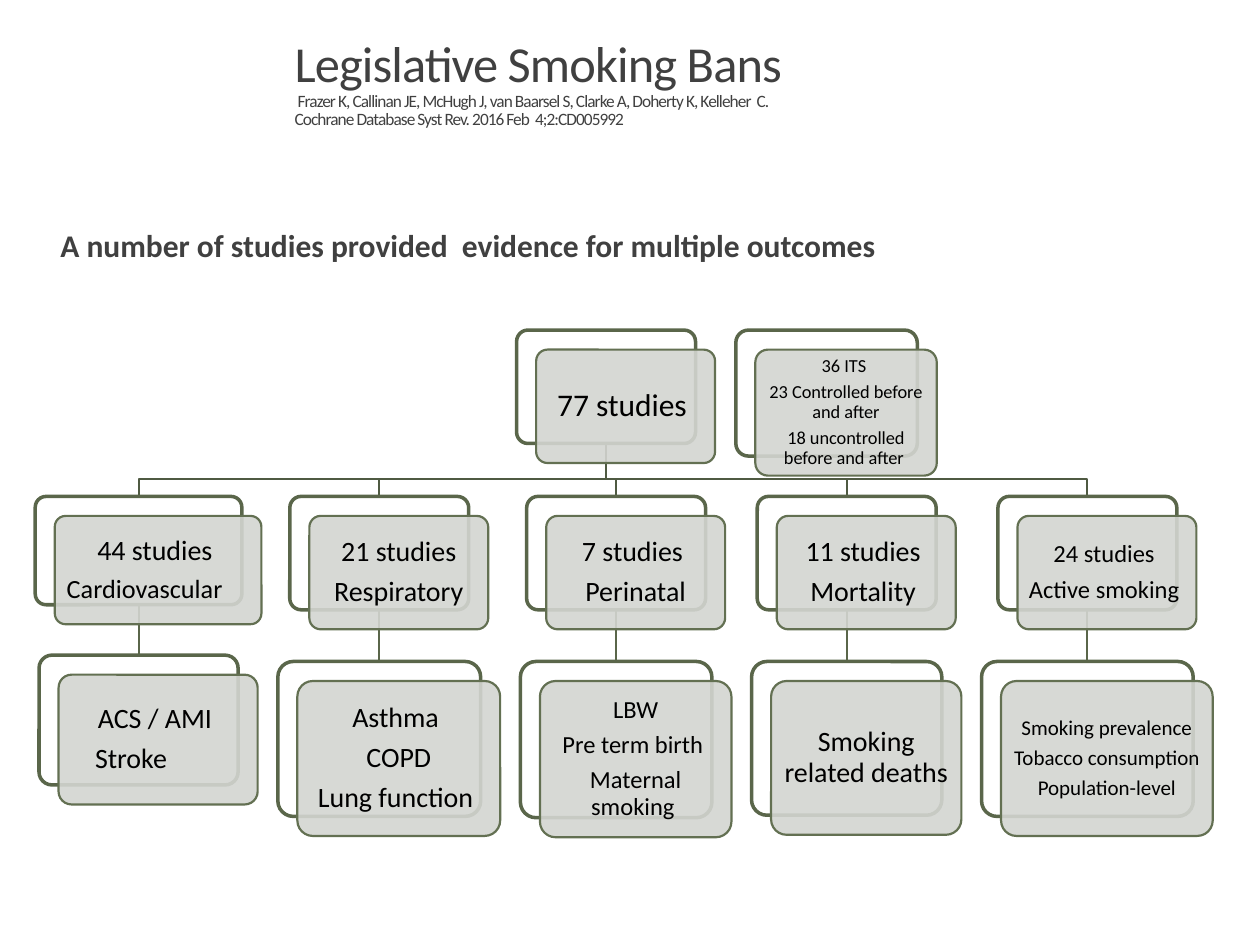
from lxml.etree import SubElement
from pptx import Presentation
from pptx.dml.color import RGBColor
from pptx.enum.shapes import MSO_CONNECTOR as Connector, MSO_SHAPE as Shape
from pptx.enum.text import MSO_ANCHOR as Anchor, PP_ALIGN as Align
from pptx.oxml.ns import qn
from pptx.util import Inches, Pt

CARD_SHIFT = 0.155
ROOT_X, ROOT_TOP, ROOT_BOTTOM = 4.81, 2.62, 3.52
BRANCH_Y, STUDY_TOP = 3.8, 3.94
STUDY_WIDTH, STUDY_HEIGHT = 1.42, 0.9
FRAME_COLOR, PANEL_COLOR, BRANCH_COLOR = "5A664A", "637052", "4F5A42"

COLUMNS = [
    dict(center=1.1, width=1.64, height=0.86, size=16,
         studies=["44 studies ", ("Cardiovascular \t", 15)],
         outcome_top=5.2, outcome_width=1.58, outcome_height=1.03, outcome_size=16,
         outcomes=["ACS / AMI ", "Stroke \t"]),
    dict(center=3.01, size=16, studies=["21 studies", "Respiratory"],
         outcome_width=1.61, outcome_height=1.23, outcome_size=16,
         outcomes=["Asthma ", "COPD", "Lung function "]),
    dict(center=4.89, size=16, studies=["7 studies ", "Perinatal"],
         outcome_width=1.52, outcome_height=1.24, outcome_size=14,
         outcomes=["LBW", "Pre term birth ", "Maternal smoking "]),
    dict(center=6.72, size=16, studies=["11 studies ", "Mortality "],
         outcome_width=1.51, outcome_height=1.22, outcome_size=16,
         outcomes=["Smoking related deaths "]),
    dict(center=8.63, size=14, studies=["24 studies ", "Active smoking "],
         outcome_width=1.68, outcome_height=1.23, outcome_size=12,
         outcomes=["Smoking prevalence", "Tobacco consumption ", "Population-level"]),
]


def color(value):
    return RGBColor.from_string(value)


def write_text(frame, lines, size, ink="000000", bold=False, align=Align.LEFT,
               anchor=Anchor.TOP, inset=(0.1, 0.05), leading=0.9, gap=0, tracking=0):
    frame.word_wrap = True
    frame.vertical_anchor = anchor
    frame.margin_left = frame.margin_right = Inches(inset[0])
    frame.margin_top = frame.margin_bottom = Inches(inset[1])
    for index, line in enumerate(lines):
        words, points = line if isinstance(line, tuple) else (line, size)
        paragraph = frame.paragraphs[0] if index == 0 else frame.add_paragraph()
        paragraph.alignment = align
        paragraph.line_spacing = leading
        paragraph.space_after = Pt(round(gap * points, 1))
        run = paragraph.add_run()
        run.text = words
        run.font.name = "Calibri"
        run.font.size = Pt(points)
        run.font.bold = bold
        run.font.color.rgb = color(ink)
        if tracking:
            run.font._element.set("spc", str(int(tracking * 100)))


def add_text(slide, left, top, width, height, lines, **style):
    box = slide.shapes.add_textbox(*map(Inches, (left, top, width, height)))
    write_text(box.text_frame, lines, **style)


def add_panel(slide, left, top, width, height, fill, line, weight):
    panel = slide.shapes.add_shape(
        Shape.ROUNDED_RECTANGLE, *map(Inches, (left, top, width, height)))
    panel.adjustments[0] = 0.1
    panel.shadow.inherit = False
    panel.fill.solid()
    panel.fill.fore_color.rgb = color(fill)
    panel.line.color.rgb = color(line)
    panel.line.width = Pt(weight)
    return panel


def add_card(slide, center, top, width, height, lines, size):
    left = center - width / 2
    add_panel(slide, left, top, width, height, "FFFFFF", FRAME_COLOR, 2)
    front = add_panel(slide, left + CARD_SHIFT, top + CARD_SHIFT, width, height,
                      "D3D5D1", PANEL_COLOR, 1.25)
    tint = front.fill._xPr.find(qn("a:solidFill"))[0]
    SubElement(tint, qn("a:alpha")).set("val", "90000")
    padding = 0.07 if size >= 16 else 0.05
    write_text(front.text_frame, lines, size, align=Align.CENTER,
               anchor=Anchor.MIDDLE, inset=(padding, padding), gap=0.35)


def add_branch(slide, center):
    builder = slide.shapes.build_freeform(Inches(ROOT_X), Inches(ROOT_BOTTOM))
    turns = [(ROOT_X, BRANCH_Y), (center, BRANCH_Y), (center, STUDY_TOP)]
    builder.add_line_segments([(Inches(x), Inches(y)) for x, y in turns], close=False)
    branch = builder.convert_to_shape()
    branch.shadow.inherit = False
    branch.fill.background()
    branch.line.color.rgb = color(BRANCH_COLOR)
    branch.line.width = Pt(1.25)


def add_stem(slide, center, top, bottom):
    stem = slide.shapes.add_connector(
        Connector.STRAIGHT, *map(Inches, (center, top, center, bottom)))
    stem.line.color.rgb = color(FRAME_COLOR)
    stem.line.width = Pt(1.25)
    SubElement(stem._element.spPr, qn("a:effectLst"))


def add_column(slide, center, studies, size, outcomes, outcome_width, outcome_height,
               outcome_size, width=STUDY_WIDTH, height=STUDY_HEIGHT, outcome_top=5.25):
    add_stem(slide, center, STUDY_TOP + height, outcome_top)
    add_card(slide, center, STUDY_TOP, width, height, studies, size)
    add_card(slide, center, outcome_top, outcome_width, outcome_height,
             outcomes, outcome_size)


def main():
    deck = Presentation()
    deck.slide_width, deck.slide_height = Inches(10), Inches(7.5)
    slide = deck.slides.add_slide(deck.slide_layouts[6])

    add_text(slide, 2.24, 0.21, 6.22, 0.86, [
        ("Legislative Smoking Bans", 28.8),
        " Frazer K, Callinan JE, McHugh J, van Baarsel S, Clarke A, Doherty K, Kelleher  C. ",
        "Cochrane Database Syst Rev. 2016 Feb  4;2:CD005992",
    ], size=9.9, ink="404040", anchor=Anchor.BOTTOM, leading=0.85, tracking=-0.5)
    add_text(slide, 0.48, 1.78, 7.77, 0.58,
             ["A number of studies provided  evidence for multiple outcomes"],
             size=18, ink="404040", bold=True, inset=(0, 0.05))

    for column in COLUMNS:
        add_branch(slide, column["center"])
    add_card(slide, ROOT_X, ROOT_TOP, STUDY_WIDTH, STUDY_HEIGHT, ["77 studies "], 18)
    for column in COLUMNS:
        add_column(slide, **column)
    add_card(slide, 6.56, ROOT_TOP, 1.44, 1, [
        "36 ITS ",
        "23 Controlled before and after",
        "18 uncontrolled before and after ",
    ], 10.5)

    deck.save("out.pptx")


if __name__ == "__main__":
    main()
